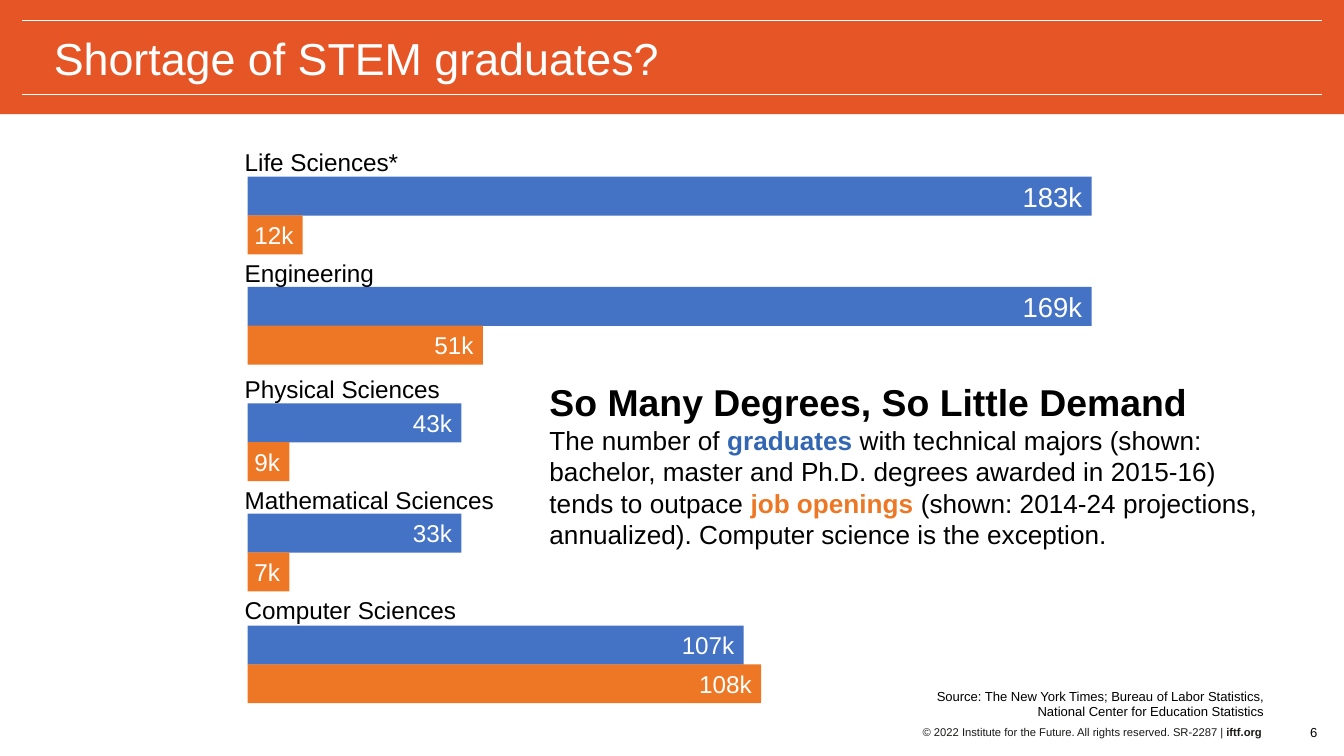
from pptx import Presentation
from pptx.dml.color import RGBColor
from pptx.enum.shapes import MSO_CONNECTOR, MSO_SHAPE
from pptx.enum.text import MSO_ANCHOR, PP_ALIGN
from pptx.oxml import parse_xml
from pptx.oxml.ns import nsdecls
from pptx.util import Inches, Pt

INK = {
    "band": "E65526", "grads": "4472C4", "jobs": "ED7724", "blue": "3266B2",
    "white": "FFFFFF", "black": "000000", "gray": "1A1918",
}

deck = Presentation()
deck.slide_width = Inches(10)
deck.slide_height = deck.slide_width * 9 // 16
col, row = deck.slide_width / 100, deck.slide_height / 56.25
slide = deck.slides.add_slide(deck.slide_layouts[5])
shapes = slide.shapes


def block(x, y, wide, high, ink):
    rect = shapes.add_shape(MSO_SHAPE.RECTANGLE, int(x * col), int(y * row), int(wide * col), int(high * row))
    rect.shadow.inherit = False
    rect.fill.solid()
    rect.fill.fore_color.rgb = RGBColor.from_string(INK[ink])
    rect.line.fill.background()
    return rect


def style(para, size, ink, align=PP_ALIGN.LEFT):
    para.alignment = align
    for run in para.runs:
        run.font.name = "Arial"
        run.font.size = Pt(size)
        run.font.color.rgb = RGBColor.from_string(INK[ink])


block(0, 0, 100, 8.5, "band")
for y in (7, 1.55):
    rule = shapes.add_connector(
        MSO_CONNECTOR.STRAIGHT, int(1.65 * col), int(y * row), int(98.35 * col), int(y * row))
    rule.line.color.rgb = RGBColor.from_string(INK["white"])
    rule.line.width = Pt(0.5)
    rule.element.spPr.append(parse_xml(f"<a:effectLst {nsdecls('a')}/>"))

title = shapes.title
title.left, title.top = int(3 * col), int(1.6 * row)
title.width, title.height = int(97.3 * col), int(5.4 * row)
title.text_frame.text = "Shortage of STEM graduates?"
title.text_frame.vertical_anchor = MSO_ANCHOR.MIDDLE
style(title.text_frame.paragraphs[0], 24, "white")
title.element.getparent().append(title.element)

fields = [
    ("Life Sciences*", 10.45, 13.15, ("183k", 62.8, 14.7), ("12k", 4.1, 13)),
    ("Engineering", 18.7, 21.35, ("169k", 62.8, 14.7), ("51k", 17.5, 13)),
    ("Physical Sciences", 27.35, 30.02, ("43k", 15.9, 13), ("9k", 3.1, 13)),
    ("Mathematical Sciences", 35.6, 38.22, ("33k", 15.9, 13), ("7k", 3.1, 13)),
    ("Computer Sciences", 43.8, 46.55, ("107k", 36.9, 13), ("108k", 38.2, 13)),
]
notes = []
for name, head, top, grads, jobs in fields:
    for step, (ink, (count, wide, size)) in enumerate((("grads", grads), ("jobs", jobs))):
        bar = block(18.43, top + 2.88 * step, wide, 2.9, ink)
        frame = bar.text_frame
        frame.margin_left, frame.margin_right = 0, Inches(0.07)
        frame.vertical_anchor = MSO_ANCHOR.MIDDLE
        frame.text = count
        style(frame.paragraphs[0], size, "white", PP_ALIGN.RIGHT)
    notes.append((name, 17.23, head, 27, 3.2, 13, "black", PP_ALIGN.LEFT))

notes += [
    ("Source: The New York Times; Bureau of Labor Statistics, National Center for Education Statistics",
     67.9, 50.7, 27.1, 3.4, 7, "black", PP_ALIGN.RIGHT),
    ("© 2022 Institute for the Future. All rights reserved. SR-2287 | ",
     66.9, 53.5, 28.2, 2, 6, "gray", PP_ALIGN.RIGHT),
    ("6", 95.1, 53.5, 3.9, 2, 7, "black", PP_ALIGN.RIGHT),
]
for text, x, y, wide, high, size, ink, align in notes:
    frame = shapes.add_textbox(int(x * col), int(y * row), int(wide * col), int(high * row)).text_frame
    frame.word_wrap = True
    frame.text = text
    para = frame.paragraphs[0]
    if text.startswith("©"):
        site = para.add_run()
        site.text = "iftf.org "
        site.font.bold = True
    if text == "6":
        frame.vertical_anchor = MSO_ANCHOR.MIDDLE
    style(para, size, ink, align)

story = shapes.add_textbox(int(39.9 * col), int(27.75 * row), int(56 * col), int(13.8 * row)).text_frame
story.word_wrap = True
story.text = "So Many Degrees, So Little Demand"
style(story.paragraphs[0], 20, "black")
story.paragraphs[0].runs[0].font.bold = True
para = story.add_paragraph()
parts = [
    ("The number of ", "black"),
    ("graduates ", "blue"),
    ("with technical majors (shown: bachelor, master and Ph.D. degrees awarded in 2015-16) ", "black"),
    ("tends to outpace ", "black"),
    ("job openings ", "jobs"),
    ("(shown: 2014-24 projections, annualized). Computer science is the exception.", "black"),
]
for text, ink in parts:
    if text.startswith("tends"):
        para.add_line_break()
    para.add_run().text = text
style(para, 14, "black")
for run, (text, ink) in zip(para.runs, parts):
    run.font.color.rgb = RGBColor.from_string(INK[ink])
    run.font.bold = ink != "black"

deck.save("out.pptx")
